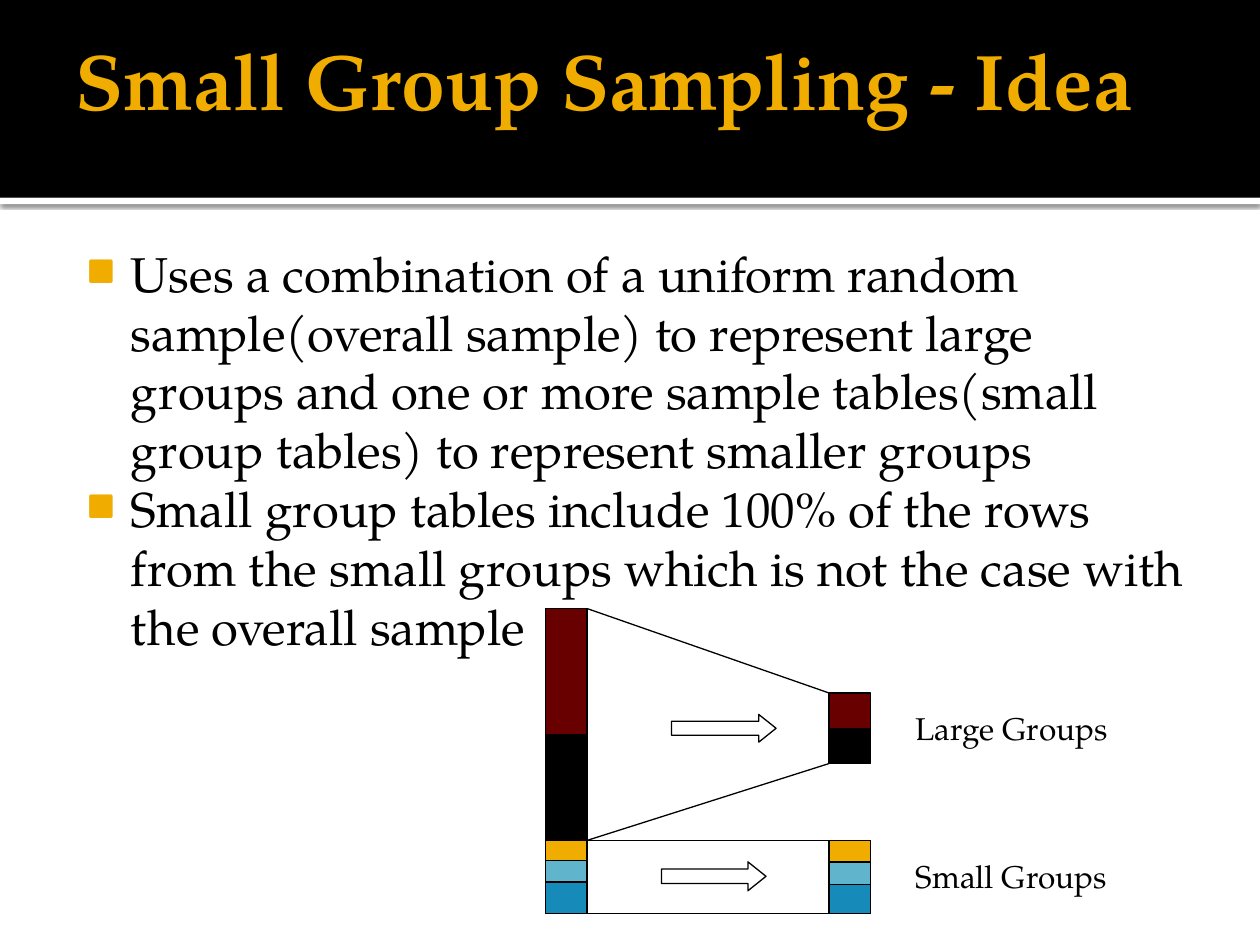
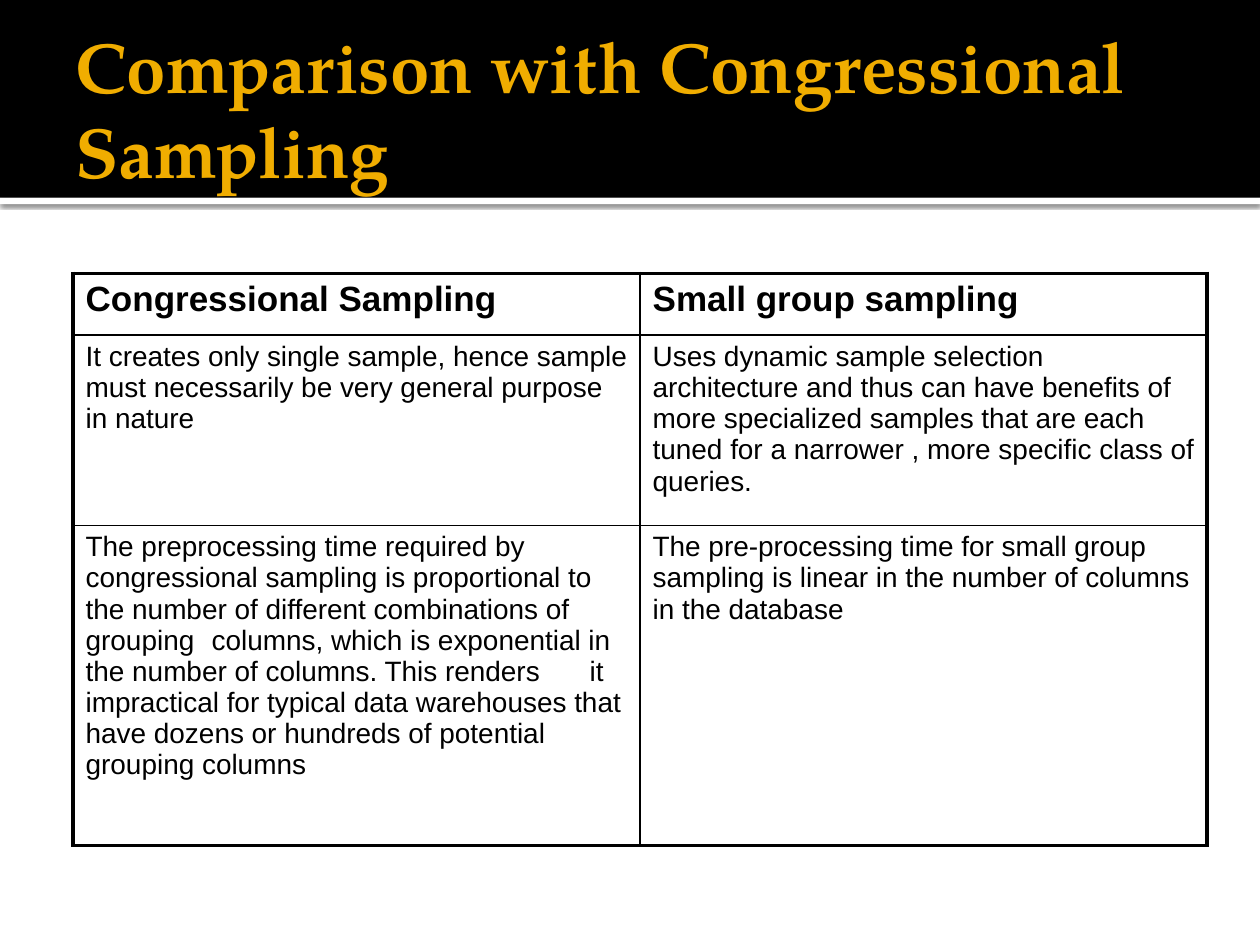
from lxml import etree
from pptx import Presentation
from pptx.dml.color import RGBColor
from pptx.enum.shapes import MSO_CONNECTOR, MSO_SHAPE
from pptx.enum.text import MSO_ANCHOR, PP_ALIGN
from pptx.oxml.ns import qn
from pptx.util import Inches, Pt

BLACK = RGBColor(0x00, 0x00, 0x00)
WHITE = RGBColor(0xFF, 0xFF, 0xFF)
GOLD = RGBColor(0xF0, 0xAD, 0x00)
MAROON = RGBColor(0x68, 0x00, 0x00)
SKY = RGBColor(0x60, 0xB5, 0xCC)
BLUE = RGBColor(0x16, 0x8B, 0xBA)

SERIF = "TeX Gyre Pagella"
SANS = "Arial"
TITLE_ONLY = 5
SLIDE_W, SLIDE_H = 10, 7.5
BAND_H, STRIP_H = 1.57, 0.05
BAR_W = 0.33
THIN, THICK = 1, 2.25

IDEA_POINTS = [
    "Uses a combination of a uniform random sample(overall sample) to represent "
    "large groups and one or more sample tables(small group tables) to represent "
    "smaller groups",
    "Small group tables include 100% of the rows from the small groups which is "
    "not the case with the overall sample",
]
COMPARISON = [
    ("Congressional Sampling", "Small group sampling"),
    ("It creates only single sample, hence sample must necessarily be very "
     "general purpose in nature",
     "Uses dynamic sample selection architecture and thus can have benefits of "
     "more specialized samples that are each tuned for a narrower , more specific "
     "class of queries."),
    ("The preprocessing time required by congressional sampling is proportional "
     "to the number of different combinations of grouping \tcolumns, which is "
     "exponential in the number of columns. This renders \tit impractical for "
     "typical data warehouses that have dozens or hundreds of potential grouping "
     "columns",
     "The pre-processing time for small group sampling is linear in the number of "
     "columns in the database"),
]


def sub(parent, tag, **attributes):
    return etree.SubElement(parent, qn(tag), {k: str(v) for k, v in attributes.items()})


def box(left, top, width, height):
    return [Inches(value) for value in (left, top, width, height)]


def write(frame, *paragraphs, size, font=SERIF, color=BLACK, bold=False,
          insets=None, anchor=None, wrap=True, bullet=False):
    """Fill a text frame; insets are left, top, right, bottom in inches."""
    frame.word_wrap = wrap
    if anchor is not None:
        frame.vertical_anchor = anchor
    if insets:
        (frame.margin_left, frame.margin_top,
         frame.margin_right, frame.margin_bottom) = box(*insets)
    for index, text in enumerate(paragraphs):
        paragraph = frame.add_paragraph() if index else frame.paragraphs[0]
        paragraph.alignment = PP_ALIGN.LEFT
        run = paragraph.add_run()
        run.text = text
        run.font.size, run.font.name, run.font.bold = Pt(size), font, bold
        run.font.color.rgb = color
        if bullet:
            add_bullet(paragraph)


def add_bullet(paragraph):
    properties = paragraph._p.get_or_add_pPr()
    properties.set("marL", str(Inches(0.48)))
    properties.set("indent", str(Inches(-0.35)))
    sub(sub(properties, "a:buClr"), "a:srgbClr", val=GOLD)
    sub(properties, "a:buSzPct", val=80000)
    sub(properties, "a:buFont", typeface=SERIF)
    sub(properties, "a:buChar", char="■")


def add_block(slide, area, fill=None, outlined=True, kind=MSO_SHAPE.RECTANGLE):
    block = slide.shapes.add_shape(kind, *box(*area))
    block.shadow.inherit = False
    if fill is None:
        block.fill.background()
    else:
        block.fill.solid()
        block.fill.fore_color.rgb = fill
    if outlined:
        block.line.color.rgb = BLACK
        block.line.width = Pt(0.75)
    else:
        block.line.fill.background()
    return block


def add_line(slide, *ends):
    line = slide.shapes.add_connector(MSO_CONNECTOR.STRAIGHT, *box(*ends))
    line.line.color.rgb = BLACK
    line.line.width = Pt(0.75)
    sub(line.element.spPr, "a:effectLst")


def add_arrow(slide, *area):
    arrow = add_block(slide, area, kind=MSO_SHAPE.RIGHT_ARROW)
    arrow.adjustments[0] = 0.5
    arrow.adjustments[1] = 0.625


def add_titled_slide(deck, title, area, size):
    """Add a slide with the black header band, its shadowed strip and a title."""
    slide = deck.slides.add_slide(deck.slide_layouts[TITLE_ONLY])
    strip = add_block(slide, (0, BAND_H, SLIDE_W, STRIP_H), WHITE, outlined=False)
    shadow = sub(strip.element.spPr.find(qn("a:effectLst")), "a:outerShdw",
                 blurRad=Pt(2.5), dist=Pt(0.8), dir=90 * 60000,
                 algn="tl", rotWithShape=0)
    sub(sub(shadow, "a:srgbClr", val=BLACK), "a:alpha", val=60000)
    band = add_block(slide, (0, 0, SLIDE_W, BAND_H), BLACK, outlined=False)
    heading = slide.shapes.title
    band.element.addnext(heading.element)
    heading.left, heading.top, heading.width, heading.height = box(*area)
    write(heading.text_frame, title, size=size, color=GOLD, bold=True,
          insets=(0.1, 0.05, 0.05, 0.05), anchor=MSO_ANCHOR.MIDDLE)
    return slide


def add_stack(slide, left, top, layers):
    """Pile coloured layers, given as (colour, height), downwards from top."""
    for color, height in layers:
        add_block(slide, (left, top, BAR_W, height), color)
        top += height


def add_sampling_diagram(slide, left, top):
    """Show the full table on the left and its two kinds of sample on the right."""
    table_right, sample_left = left + BAR_W, left + 2.25
    large_top, large_bottom = top + 0.67, top + 1.23
    small_top, small_bottom = top + 1.84, top + 2.42

    add_stack(slide, left, top, [(MAROON, 1), (BLACK, 0.84), (GOLD, 0.16),
                                 (SKY, 0.17), (BLUE, 0.25)])
    add_stack(slide, sample_left, large_top, [(MAROON, 0.28), (BLACK, 0.28)])
    add_stack(slide, sample_left, small_top, [(GOLD, 0.17), (SKY, 0.18), (BLUE, 0.23)])

    for start, end in ((top, large_top), (small_top, large_bottom),
                       (small_top, small_top), (small_bottom, small_bottom)):
        add_line(slide, table_right, start, sample_left, end)
    add_arrow(slide, left + 1, top + 0.84, 0.83, 0.22)
    add_arrow(slide, left + 0.92, top + 2.01, 0.83, 0.23)

    for label, offset in (("Large Groups", 0.75), ("Small Groups", 1.92)):
        caption = slide.shapes.add_textbox(*box(left + 2.84, top + offset, 1.86, 0.4))
        write(caption.text_frame, label, size=18, wrap=False)


def set_borders(cell, **widths):
    properties = cell._tc.get_or_add_tcPr()
    for side in "LRTB":
        border = sub(properties, f"a:ln{side}", w=Pt(widths[side]))
        sub(sub(border, "a:solidFill"), "a:srgbClr", val=BLACK)


def add_comparison_table(slide, left, top, width, row_heights):
    last_row, last_column = len(COMPARISON) - 1, len(COMPARISON[0]) - 1
    table = slide.shapes.add_table(last_row + 1, last_column + 1,
                                   *box(left, top, width, sum(row_heights))).table
    table.first_row = table.horz_banding = False
    for column in table.columns:
        column.width = Inches(width / (last_column + 1))
    for r, (height, texts) in enumerate(zip(row_heights, COMPARISON)):
        table.rows[r].height = Inches(height)
        for c, text in enumerate(texts):
            cell = table.cell(r, c)
            write(cell.text_frame, text, font=SANS, size=16 if r else 20, bold=r == 0)
            set_borders(cell, L=THIN if c else THICK, T=THIN if r else THICK,
                        R=THICK if c == last_column else THIN,
                        B=THICK if r == last_row else THIN)
            cell.fill.background()


def build_idea_slide(deck):
    slide = add_titled_slide(deck, "Small Group Sampling - Idea", (0.5, 0, 9, 1.25), 45)
    points = slide.shapes.add_textbox(*box(0.5, 1.83, 9, 4.95))
    write(points.text_frame, *IDEA_POINTS, size=28, bullet=True,
          insets=(0.06, 0.1, 0.1, 0.05))
    add_sampling_diagram(slide, 4.33, 4.83)


def build_comparison_slide(deck):
    slide = add_titled_slide(deck, "Comparison with Congressional Sampling",
                             (0.5, 0.17, 9, 1.37), 40.5)
    add_comparison_table(slide, 0.58, 2.17, 9, (0.49, 1.51, 2.54))


def main():
    deck = Presentation()
    deck.slide_width, deck.slide_height = Inches(SLIDE_W), Inches(SLIDE_H)
    build_idea_slide(deck)
    build_comparison_slide(deck)
    deck.save("out.pptx")


if __name__ == "__main__":
    main()
